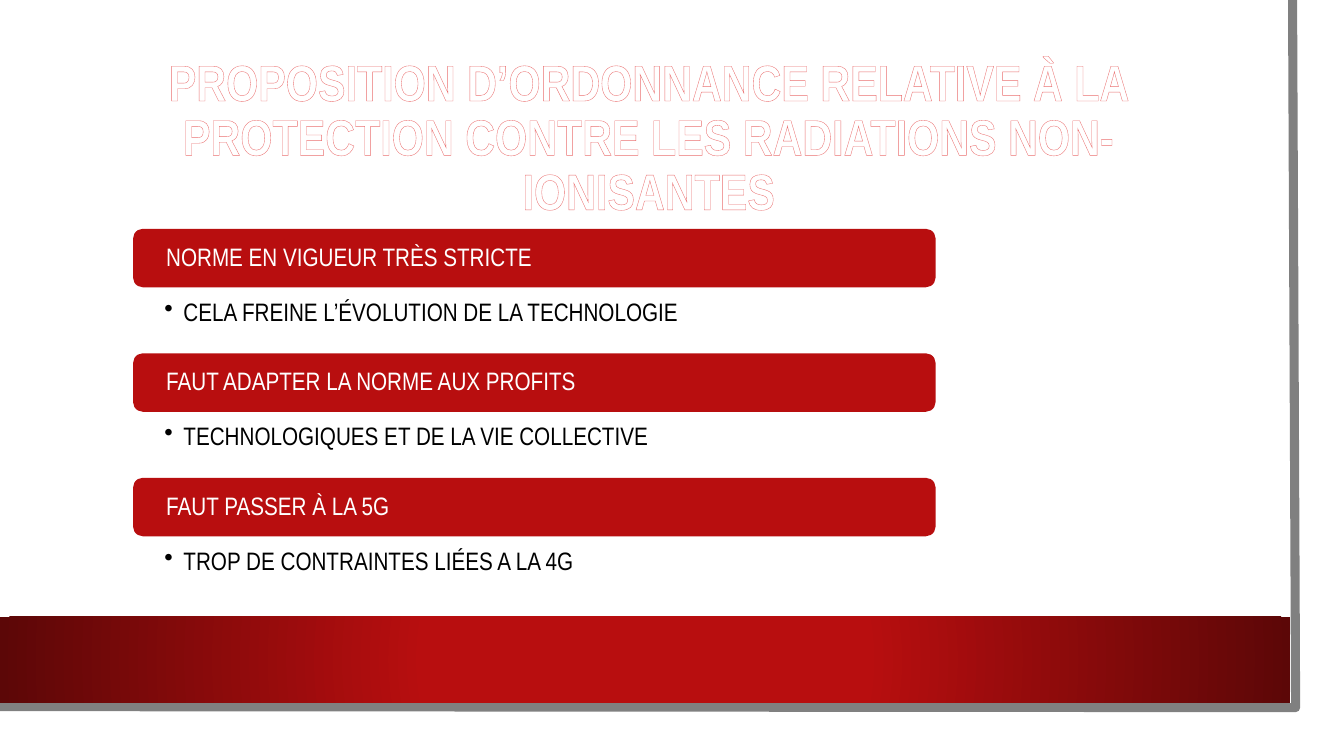
from lxml import etree
from pptx import Presentation
from pptx.dml.color import RGBColor
from pptx.enum.shapes import MSO_SHAPE
from pptx.enum.text import MSO_ANCHOR, MSO_AUTO_SIZE, PP_ALIGN
from pptx.oxml.ns import qn
from pptx.util import Inches, Pt

RECTANGLE = MSO_SHAPE.RECTANGLE
ROUNDED = MSO_SHAPE.ROUNDED_RECTANGLE
TOP, MIDDLE = MSO_ANCHOR.TOP, MSO_ANCHOR.MIDDLE
LEFT, CENTER = PP_ALIGN.LEFT, PP_ALIGN.CENTER

FONT = "Arial Narrow"
COLORS = {
    "white": "FFFFFF",
    "black": "000000",
    "red": "B80E0F",
    "dark_red": "5C0707",
    "outline": "EA6F6F",
    "gray": "808080",
}
TITLE = ("PROPOSITION D’ORDONNANCE RELATIVE À LA PROTECTION "
         "CONTRE LES RADIATIONS NON-IONISANTES")
ARGUMENTS = [
    ("NORME EN VIGUEUR TRÈS STRICTE", "CELA FREINE L’ÉVOLUTION DE LA TECHNOLOGIE"),
    ("FAUT ADAPTER LA NORME AUX PROFITS", "TECHNOLOGIQUES ET DE LA VIE COLLECTIVE"),
    ("FAUT PASSER À LA 5G", "TROP DE CONTRAINTES LIÉES A LA 4G"),
]
FIRST_BAR_TOP = 2.27
ARGUMENT_STEP = 1.235
PANEL_OFFSET = 0.29


def color(name):
    return RGBColor.from_string(COLORS[name])


def add_block(slide, kind, left, top, width, height, fill):
    shape = slide.shapes.add_shape(
        kind, Inches(left), Inches(top), Inches(width), Inches(height))
    shape.shadow.inherit = False
    shape.fill.solid()
    shape.fill.fore_color.rgb = color(fill)
    shape.line.fill.background()
    return shape


def set_insets(text_frame, left, top, right, bottom):
    text_frame.margin_left = Inches(left)
    text_frame.margin_top = Inches(top)
    text_frame.margin_right = Inches(right)
    text_frame.margin_bottom = Inches(bottom)


def write_text(shape, text, size, font_color, anchor, align=LEFT, bullet=False):
    text_frame = shape.text_frame
    text_frame.word_wrap = True
    text_frame.auto_size = MSO_AUTO_SIZE.NONE
    text_frame.vertical_anchor = anchor
    text_frame.text = text
    paragraph = text_frame.paragraphs[0]
    paragraph.alignment = align
    paragraph.line_spacing = 0.9
    if bullet:
        add_bullet(paragraph)
    paragraph.font.name = FONT
    paragraph.font.size = Pt(size)
    paragraph.font.color.rgb = color(font_color)
    return paragraph


def add_bullet(paragraph):
    properties = paragraph._p.get_or_add_pPr()
    properties.set("marL", str(Inches(0.19)))
    properties.set("indent", str(-Inches(0.19)))
    etree.SubElement(properties, qn("a:buChar"), char="•")


def outline_text(run, line_color, width):
    line = etree.Element(qn("a:ln"), w=str(Pt(width)))
    fill = etree.SubElement(line, qn("a:solidFill"))
    etree.SubElement(fill, qn("a:srgbClr"), val=COLORS[line_color])
    run.font._element.insert(0, line)


def fill_radial(shape):
    """Spread red from the centre of the shape to dark red at its ends."""
    shape.fill.gradient()
    stops = zip(shape.fill.gradient_stops, (0.34, 1), ("red", "dark_red"))
    for stop, position, name in stops:
        stop.position = position
        stop.color.rgb = color(name)
    gradient = shape._element.spPr.find(qn("a:gradFill"))
    gradient.remove(gradient.find(qn("a:lin")))
    path = etree.Element(qn("a:path"), path="circle")
    etree.SubElement(path, qn("a:fillToRect"), l="50000", t="50000", r="50000", b="50000")
    gradient.find(qn("a:gsLst")).addnext(path)


def add_backdrop(slide):
    add_block(slide, RECTANGLE, 0, 0, 13.1, 7.27, "white")
    builder = slide.shapes.build_freeform(Inches(12.82), 0)
    builder.add_line_segments(
        [(Inches(12.85), Inches(7.02)), (Inches(-0.03), Inches(7.01))], close=False)
    edge = builder.convert_to_shape()
    edge.shadow.inherit = False
    edge.fill.background()
    edge.line.color.rgb = color("gray")
    edge.line.width = Pt(6.5)
    fill_radial(add_block(slide, RECTANGLE, 0, 6.12, 12.8, 0.85, "red"))


def add_title(slide):
    title = slide.shapes.title
    title.left, title.top = Inches(0.75), Inches(0.75)
    title.width, title.height = Inches(11.37), Inches(1.26)
    paragraph = write_text(title, TITLE, 36, "white", MIDDLE, CENTER)
    paragraph.font.bold = True
    outline_text(paragraph.runs[0], "outline", 2.48)
    # The title stands in front of the backdrop.
    slide.shapes._spTree.append(title._element)


def add_argument(slide, top, heading, detail):
    panel = add_block(slide, RECTANGLE, 0.75, top + PANEL_OFFSET, 11.37, 0.84, "white")
    set_insets(panel.text_frame, 0.88, 0.41, 0.88, 0.14)
    write_text(panel, detail, 18, "black", TOP, bullet=True)
    bar = add_block(slide, ROUNDED, 1.32, top, 7.96, 0.58, "red")
    set_insets(bar.text_frame, 0.3, 0, 0.3, 0)
    write_text(bar, heading, 18, "white", MIDDLE)


def main():
    presentation = Presentation()
    presentation.slide_width = Inches(13.33)
    presentation.slide_height = Inches(7.5)
    slide = presentation.slides.add_slide(presentation.slide_layouts[5])
    add_backdrop(slide)
    add_title(slide)
    for index, (heading, detail) in enumerate(ARGUMENTS):
        add_argument(slide, FIRST_BAR_TOP + index * ARGUMENT_STEP, heading, detail)
    presentation.save("out.pptx")


if __name__ == "__main__":
    main()
